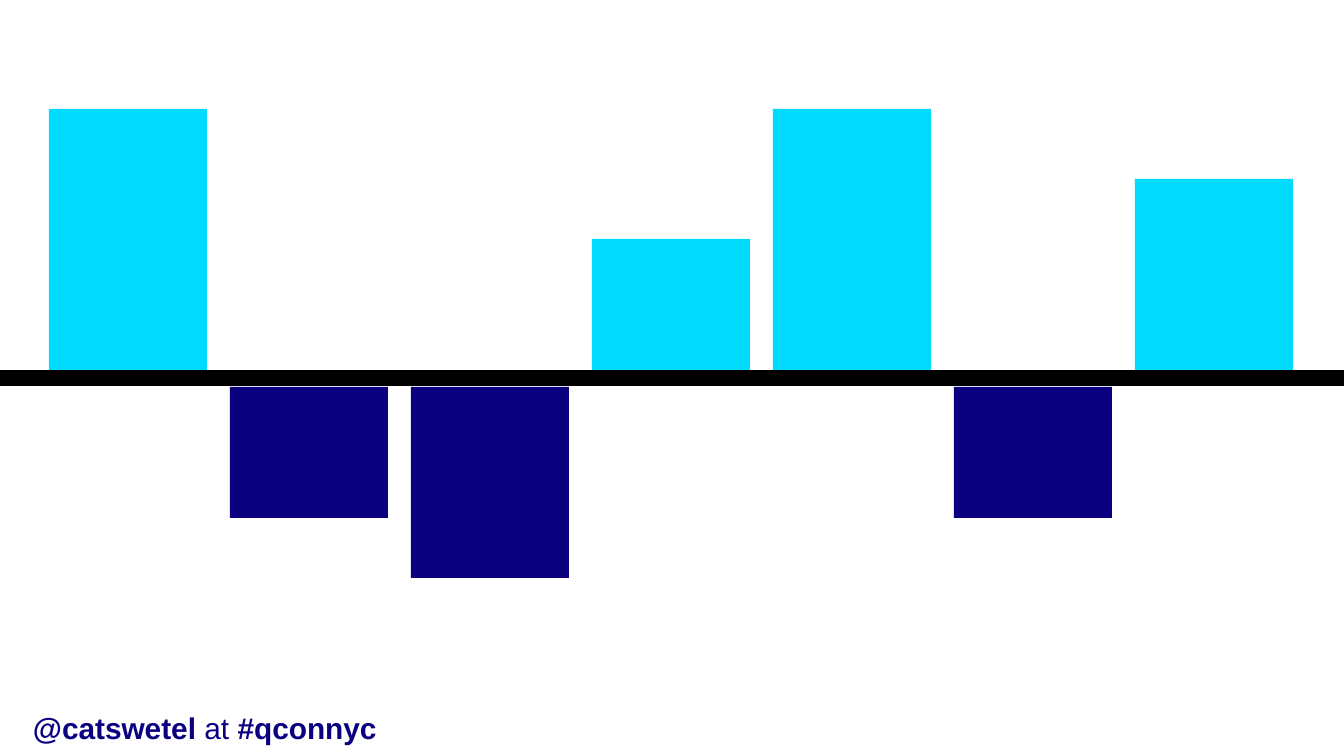
from dataclasses import dataclass

from lxml import etree
from pptx import Presentation
from pptx.dml.color import RGBColor
from pptx.enum.shapes import MSO_CONNECTOR, MSO_SHAPE
from pptx.enum.text import MSO_ANCHOR
from pptx.oxml.ns import qn
from pptx.slide import Slide
from pptx.util import Emu, Pt

CYAN = RGBColor(0x01, 0xDB, 0xFF)
NAVY = RGBColor(0x0B, 0x00, 0x80)
BLACK = RGBColor(0x00, 0x00, 0x00)
RECTANGLE = MSO_SHAPE.RECTANGLE
STRAIGHT = MSO_CONNECTOR.STRAIGHT
TOP = MSO_ANCHOR.TOP

EMU_PER_PX = 914400 / 134.4
SLIDE_WIDTH, SLIDE_HEIGHT = 1344, 756
BAR_LEFT, BAR_WIDTH, BAR_PITCH = 49, 158, 181
ABOVE_BOTTOM, BELOW_TOP, AXIS_Y = 370, 387, 378


@dataclass(frozen=True)
class Bar:
    """A bar whose height is positive above the axis and negative below it."""
    height: int


BARS = [Bar(261), Bar(-131), Bar(-191), Bar(131), Bar(261), Bar(-131), Bar(191)]
FOOTER_RUNS = [("@catswetel ", True), ("at ", False), ("#qconnyc", True)]


def px(length: int) -> Emu:
    return Emu(round(length * EMU_PER_PX))


def draw_bar(slide: Slide, bar: Bar, column: int) -> None:
    above = bar.height > 0
    left = BAR_LEFT + column * BAR_PITCH
    top = ABOVE_BOTTOM - bar.height if above else BELOW_TOP
    shape = slide.shapes.add_shape(
        RECTANGLE, px(left), px(top), px(BAR_WIDTH), px(abs(bar.height)))
    shape.shadow.inherit = False
    shape.fill.solid()
    shape.fill.fore_color.rgb = CYAN if above else NAVY
    shape.line.fill.background()


def draw_axis(slide: Slide) -> None:
    axis = slide.shapes.add_connector(
        STRAIGHT, px(0), px(AXIS_Y), px(1364), px(AXIS_Y))
    axis.line.color.rgb = BLACK
    axis.line.width = Pt(9)
    etree.SubElement(axis._element.spPr, qn("a:effectLst"))


def draw_footer(slide: Slide) -> None:
    box = slide.shapes.add_textbox(px(20), px(697), px(558), px(47))
    frame = box.text_frame
    frame.word_wrap = True
    frame.vertical_anchor = TOP
    frame.margin_left = frame.margin_right = px(13)
    frame.margin_top = frame.margin_bottom = px(13)
    paragraph = frame.paragraphs[0]
    paragraph.font.name = "Arial"
    paragraph.font.size = Pt(16)
    paragraph.font.color.rgb = NAVY
    for text, bold in FOOTER_RUNS:
        run = paragraph.add_run()
        run.text = text
        run.font.bold = bold


def main() -> None:
    presentation = Presentation()
    presentation.slide_width = px(SLIDE_WIDTH)
    presentation.slide_height = px(SLIDE_HEIGHT)
    slide = presentation.slides.add_slide(presentation.slide_layouts[6])
    for column, bar in enumerate(BARS):
        draw_bar(slide, bar, column)
    draw_axis(slide)
    draw_footer(slide)
    presentation.save("out.pptx")


if __name__ == "__main__":
    main()
